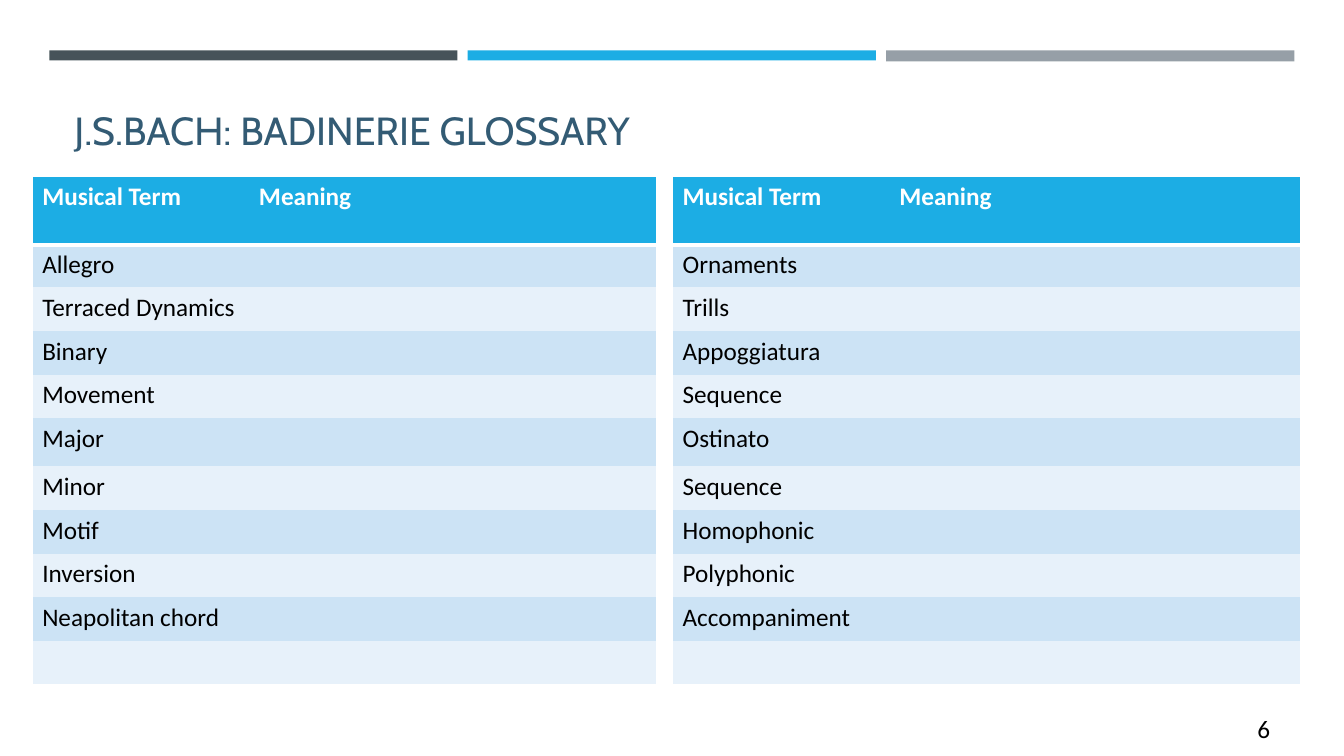
from lxml.etree import SubElement
from pptx import Presentation
from pptx.dml.color import RGBColor
from pptx.enum.shapes import MSO_SHAPE
from pptx.enum.text import MSO_ANCHOR, PP_ALIGN
from pptx.oxml.ns import qn
from pptx.util import Pt

TITLE = "J.S.BACH: BADINERIE GLOSSARY"
PAGE_NUMBER = "6"
HEADINGS = ("Musical Term", "Meaning")
GLOSSARIES = [
    {"left": 23, "meaning_width": 291, "terms": [
        "Allegro", "Terraced Dynamics", "Binary", "Movement", "Major",
        "Minor", "Motif", "Inversion", "Neapolitan chord", ""]},
    {"left": 480.4, "meaning_width": 293.5, "terms": [
        "Ornaments", "Trills", "Appoggiatura", "Sequence", "Ostinato",
        "Sequence", "Homophonic", "Polyphonic", "Accompaniment", ""]},
]
COLORS = {
    "slate": "465359", "blue": "1CADE4", "gray": "969FA7", "title": "335B74",
    "dark_band": "CCE3F5", "light_band": "E7F1FA", "white": "FFFFFF", "black": "000000",
}
BARS = [("slate", 7.2), ("blue", 7.2), ("gray", 7.9)]
BAR_LEFT, BAR_TOP, BAR_WIDTH, BAR_STEP = 35.2, 36, 291.6, 298.9
TABLE_TOP, TERM_WIDTH = 126.2, 154.8
ROW_HEIGHTS = [48.6, 30.5] + [31.2] * 2 + [31.2, 34.4] + [31.2] * 5
NO_STYLE = "{2D5ABB26-0587-4C30-8999-92F81FD0307C}"


def color(name):
    return RGBColor.from_string(COLORS[name])


def set_font(paragraph, name, size, color_name, bold=False):
    paragraph.font.name = name
    paragraph.font.size = Pt(size)
    paragraph.font.bold = bold
    paragraph.font.color.rgb = color(color_name)


def add_text(slide, text, box, font, alignment=PP_ALIGN.LEFT):
    shape = slide.shapes.add_textbox(*map(Pt, box))
    frame = shape.text_frame
    frame.word_wrap = True
    frame.vertical_anchor = MSO_ANCHOR.MIDDLE
    frame.text = text
    paragraph = frame.paragraphs[0]
    paragraph.alignment = alignment
    set_font(paragraph, *font)


def add_border(cell, side, width):
    line = SubElement(cell._tc.get_or_add_tcPr(), qn(f"a:ln{side}"), w=str(Pt(width)))
    fill = SubElement(line, qn("a:solidFill"))
    SubElement(fill, qn("a:srgbClr"), val=COLORS["white"])


def add_glossary(slide, left, meaning_width, terms):
    rows = [HEADINGS] + [(term, "") for term in terms]
    widths = (TERM_WIDTH, meaning_width)
    table = slide.shapes.add_table(
        len(rows), len(widths), Pt(left), Pt(TABLE_TOP),
        Pt(sum(widths)), Pt(sum(ROW_HEIGHTS))).table
    table._tbl.tblPr.find(qn("a:tableStyleId")).text = NO_STYLE
    for column, width in zip(table.columns, widths):
        column.width = Pt(width)
    for row_index, (texts, height) in enumerate(zip(rows, ROW_HEIGHTS)):
        table.rows[row_index].height = Pt(height)
        header = row_index == 0
        band = "blue" if header else "dark_band" if row_index % 2 else "light_band"
        for column_index, text in enumerate(texts):
            cell = table.cell(row_index, column_index)
            add_border(cell, "R" if column_index else "L", 1)
            if header:
                add_border(cell, "T", 1)
                add_border(cell, "B", 3)
            elif row_index == len(rows) - 1:
                add_border(cell, "B", 1)
            cell.fill.solid()
            cell.fill.fore_color.rgb = color(band)
            cell.text = text
            set_font(cell.text_frame.paragraphs[0], "Calibri", 18,
                     "white" if header else "black", header)


def main():
    presentation = Presentation()
    presentation.slide_width, presentation.slide_height = Pt(960), Pt(540)
    slide = presentation.slides.add_slide(presentation.slide_layouts[6])
    for index, (name, height) in enumerate(BARS):
        bar = slide.shapes.add_shape(
            MSO_SHAPE.RECTANGLE, Pt(BAR_LEFT + index * BAR_STEP), Pt(BAR_TOP),
            Pt(BAR_WIDTH), Pt(height))
        bar.shadow.inherit = False
        bar.fill.solid()
        bar.fill.fore_color.rgb = color(name)
        bar.line.fill.background()
    add_text(slide, TITLE, (46, 46, 868.4, 93.6), ("Cabin", 28, "title"))
    for glossary in GLOSSARIES:
        add_glossary(slide, **glossary)
    add_text(slide, PAGE_NUMBER, (831.6, 506.2, 82.8, 28.8),
             ("Calibri", 18, "black"), PP_ALIGN.RIGHT)
    presentation.save("out.pptx")


if __name__ == "__main__":
    main()
